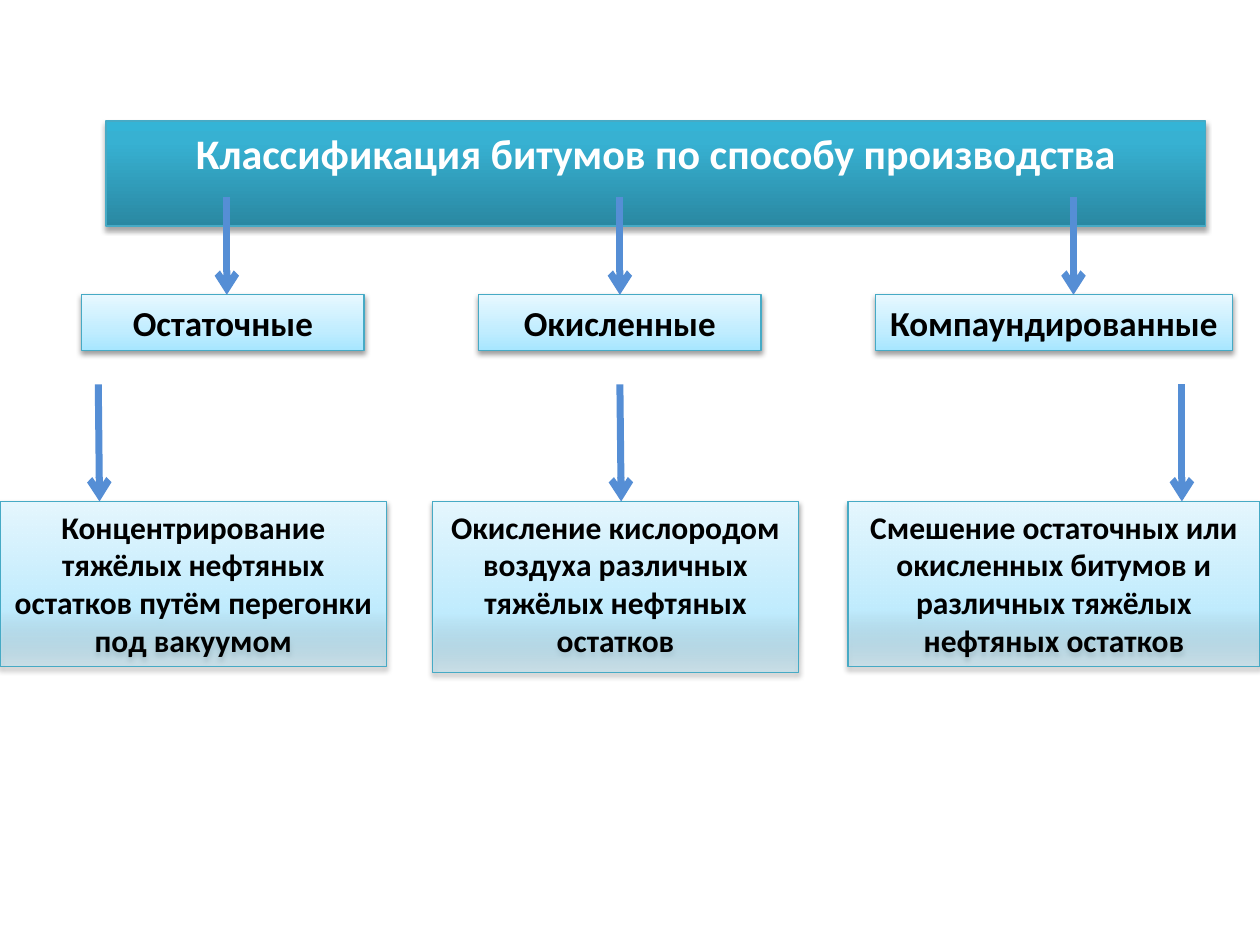
from lxml.etree import SubElement
from pptx import Presentation
from pptx.dml.color import RGBColor
from pptx.enum.shapes import MSO_CONNECTOR as Connector, MSO_SHAPE as Shape
from pptx.enum.text import MSO_ANCHOR as Anchor, MSO_AUTO_SIZE as AutoSize, PP_ALIGN as Align
from pptx.oxml.ns import qn
from pptx.util import Inches, Pt

TITLE_STOPS = [(0, "2A88A2", 100), (80, "37B1D2", 100), (100, "34B4D6", 100)]
KIND_STOPS = [(0, "A7E6FF", 100), (35, "C1EDFF", 100), (100, "E7F8FF", 100)]
METHOD_STOPS = [(0, "A7E6FF", 31), *KIND_STOPS[1:]]
KIND_TOP, METHOD_TOP = 2.34, 3.98
COLUMNS = [
    {
        "kind": ("Остаточные", 0.65, 2.24),
        "method": ("Концентрирование тяжёлых нефтяных остатков путём перегонки под вакуумом", 0, 3.07, 1.31),
        "arrows": (1.8, 0.78, 0.79),
    },
    {
        "kind": ("Окисленные", 3.8, 2.24),
        "method": ("Окисление кислородом воздуха различных тяжёлых нефтяных остатков", 3.43, 2.91, 1.36),
        "arrows": (4.92, 4.92, 4.93),
    },
    {
        "kind": ("Компаундированные", 6.95, 2.83),
        "method": ("Смешение остаточных или окисленных битумов и различных тяжёлых нефтяных остатков", 6.73, 3.27, 1.31),
        "arrows": (8.52, 9.38, 9.38),
    },
]


def color(value):
    """Turn a hex string into a colour."""
    return RGBColor.from_string(value)


def apply_format(target, values):
    """Set each attribute of the target from a dict."""
    for name, value in values.items():
        setattr(target, name, value)


def add_hex(parent, value, opacity):
    """Add a colour element with an opacity in percent."""
    element = SubElement(parent, qn("a:srgbClr"), val=value)
    if opacity < 100:
        SubElement(element, qn("a:alpha"), val=str(opacity * 1000))


def fill_gradient(shape, stops):
    """Fill a shape from bottom to top through the given stops."""
    shape.fill.gradient()
    shape.fill.gradient_angle = 90
    stop_list = next(shape._element.spPr.iter(qn("a:gsLst")))
    stop_list.clear()
    for position, value, opacity in stops:
        add_hex(SubElement(stop_list, qn("a:gs"), pos=str(position * 1000)), value, opacity)


def add_shadow(shape, distance, opacity):
    """Drop a soft black shadow below a shape."""
    shape.shadow.inherit = False
    effects = shape._element.spPr.find(qn("a:effectLst"))
    shadow = SubElement(
        effects, qn("a:outerShdw"), blurRad=str(Pt(3.1)), dist=str(Pt(distance)),
        dir="5400000", rotWithShape="0",
    )
    add_hex(shadow, "000000", opacity)


def style_box(box, text, size, ink, stops, shadow):
    """Give a box its surface and its centred bold text."""
    fill_gradient(box, stops)
    box.line.color.rgb = color("46AAC5")
    box.line.width = Pt(0.75)
    add_shadow(box, *shadow)
    frame = box.text_frame
    apply_format(frame, {
        "word_wrap": True, "auto_size": AutoSize.SHAPE_TO_FIT_TEXT, "vertical_anchor": Anchor.TOP,
    })
    para = frame.paragraphs[0]
    para.alignment = Align.CENTER
    span = para.add_run()
    span.text = text
    apply_format(span.font, {"name": "Calibri", "size": Pt(size), "bold": True})
    span.font.color.rgb = color(ink)


def add_title(page, text):
    """Place the heading bar in the title placeholder."""
    title = page.shapes.title
    apply_format(title, {
        "left": Inches(0.84), "top": Inches(0.96), "width": Inches(8.73), "height": Inches(0.5),
    })
    style_box(title, text, 24, "FFFFFF", TITLE_STOPS, (1.8, 35))


def add_box(page, text, left, top, width, height, size, stops):
    """Add a light rectangle with dark text."""
    place = map(Inches, (left, top, width, height))
    box = page.shapes.add_shape(Shape.RECTANGLE, *place)
    style_box(box, text, size, "000000", stops, (1.6, 38))
    return box


def add_arrow(page, start, end, target):
    """Draw an arrow, joined to the target when it ends at its top middle."""
    points = map(Inches, (*start, *end))
    arrow = page.shapes.add_connector(Connector.STRAIGHT, *points)
    arrow.line.color.rgb = color("558ED5")
    arrow.line.width = Pt(4)
    SubElement(arrow.line._get_or_add_ln(), qn("a:tailEnd"), type="arrow")
    SubElement(arrow._element.spPr, qn("a:effectLst"))
    if abs(target.left + target.width / 2 - Inches(end[0])) < Inches(0.01):
        arrow.end_connect(target, 0)


def add_column(page, kind, method, arrows):
    """Add one kind of bitumen, its method and the arrows to both."""
    name, left, width = kind
    kind_box = add_box(page, name, left, KIND_TOP, width, 0.44, 20, KIND_STOPS)
    text, left, width, height = method
    method_box = add_box(page, text, left, METHOD_TOP, width, height, 18, METHOD_STOPS)
    upper, lower_start, lower_end = arrows
    add_arrow(page, (upper, 1.56), (upper, KIND_TOP), kind_box)
    add_arrow(page, (lower_start, 3.05), (lower_end, METHOD_TOP), method_box)


def main():
    """Build and save the slide."""
    deck = Presentation()
    apply_format(deck, {"slide_width": Inches(10), "slide_height": Inches(7.5)})
    page = deck.slides.add_slide(deck.slide_layouts[5])
    add_title(page, "Классификация битумов по способу производства")
    for column in COLUMNS:
        add_column(page, **column)
    deck.save("out.pptx")


if __name__ == "__main__":
    main()
